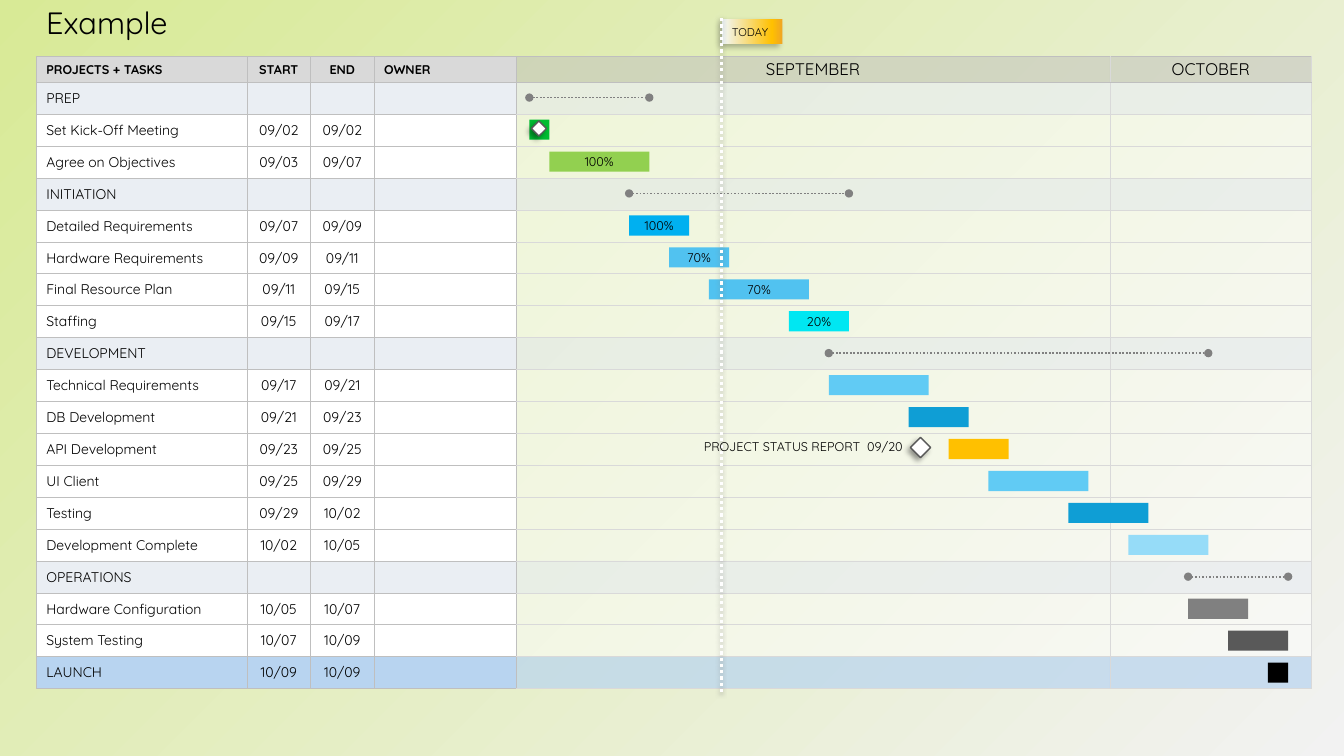
from dataclasses import dataclass
from typing import Optional

import lxml.etree
import pptx
import pptx.dml.color
import pptx.enum.dml
import pptx.enum.shapes
import pptx.enum.text
import pptx.oxml.ns
import pptx.shapes.autoshape
import pptx.shapes.base
import pptx.shapes.connector
import pptx.slide
import pptx.table
import pptx.text.text
import pptx.util

Inches = pptx.util.Inches
Pt = pptx.util.Pt
RGBColor = pptx.dml.color.RGBColor
Align = pptx.enum.text.PP_ALIGN
Shape = pptx.enum.shapes.MSO_SHAPE
qn = pptx.oxml.ns.qn

BLACK = RGBColor(0x00, 0x00, 0x00)
WHITE = RGBColor(0xFF, 0xFF, 0xFF)
PALE = RGBColor(0xF2, 0xF2, 0xF2)
LIME = RGBColor(0xD8, 0xEA, 0x96)
HEADER = RGBColor(0xD9, 0xD9, 0xD9)
BORDER = RGBColor(0xBF, 0xBF, 0xBF)
PHASE = RGBColor(0xEA, 0xEE, 0xF3)
LAUNCH = RGBColor(0xB8, 0xD4, 0xF0)
GREY = RGBColor(0x80, 0x80, 0x80)
DARK = RGBColor(0x59, 0x59, 0x59)
GREEN = RGBColor(0x00, 0xBD, 0x32)
LIGHT_GREEN = RGBColor(0x92, 0xD0, 0x50)
AZURE = RGBColor(0x00, 0xB0, 0xF0)
SOFT_BLUE = RGBColor(0x51, 0xC2, 0xF0)
CYAN = RGBColor(0x00, 0xE7, 0xF2)
SKY = RGBColor(0x61, 0xCB, 0xF4)
OCEAN = RGBColor(0x0F, 0x9E, 0xD5)
ICE = RGBColor(0x96, 0xDC, 0xF8)
AMBER = RGBColor(0xFF, 0xC0, 0x00)
ORANGE = RGBColor(0xF0, 0xA6, 0x22)
MIST = RGBColor(0xF0, 0xF8, 0xFD)

FONT = "Quicksand"
TABLE_LEFT, TABLE_TOP = 0.36, 0.56
COLUMNS = [2.09, 0.63, 0.63, 1.41, 5.89, 2]
HEADER_HEIGHT = 0.25
FIRST_TIMELINE_COLUMN = 4
TODAY_LEFT = 7.16


@dataclass
class Task:
    name: str
    start: str
    end: str
    color: RGBColor
    label: str = ""
    row_fill: RGBColor = WHITE
    row_alpha: int = 50


@dataclass
class Phase:
    name: str
    tasks: list[Task]


PHASES = [
    Phase("PREP", [
        Task("Set Kick-Off Meeting", "09/02", "09/02", GREEN),
        Task("Agree on Objectives", "09/03", "09/07", LIGHT_GREEN, "100%")]),
    Phase("INITIATION", [
        Task("Detailed Requirements", "09/07", "09/09", AZURE, "100%"),
        Task("Hardware Requirements", "09/09", "09/11", SOFT_BLUE, "70%"),
        Task("Final Resource Plan", "09/11", "09/15", SOFT_BLUE, "70%"),
        Task("Staffing", "09/15", "09/17", CYAN, "20%")]),
    Phase("DEVELOPMENT", [
        Task("Technical Requirements", "09/17", "09/21", SKY),
        Task("DB Development", "09/21", "09/23", OCEAN),
        Task("API Development", "09/23", "09/25", AMBER),
        Task("UI Client", "09/25", "09/29", SKY),
        Task("Testing", "09/29", "10/02", OCEAN),
        Task("Development Complete", "10/02", "10/05", ICE)]),
    Phase("OPERATIONS", [
        Task("Hardware Configuration", "10/05", "10/07", GREY),
        Task("System Testing", "10/07", "10/09", DARK),
        Task("LAUNCH", "10/09", "10/09", BLACK, "", LAUNCH, 70)]),
]
ROWS = [row for phase in PHASES for row in (phase, *phase.tasks)]
ROW_HEIGHT = 6.02 / len(ROWS)


def day_left(date: str) -> float:
    month, day = map(int, date.split("/"))
    return 5.25 + 0.198 * ((month - 9) * 30 + day - 2)


def add_xml(parent: lxml.etree._Element, tag: str, **values: object) -> lxml.etree._Element:
    return lxml.etree.SubElement(parent, qn(tag), {key: str(value) for key, value in values.items()})


def set_gradient(element: lxml.etree._Element, stops: list[tuple[int, RGBColor]], angle: int) -> None:
    gradient = element.find(".//" + qn("a:gradFill"))
    for child in list(gradient):
        gradient.remove(child)
    stop_list = add_xml(gradient, "a:gsLst")
    for position, color in stops:
        add_xml(add_xml(stop_list, "a:gs", pos=position * 1000), "a:srgbClr", val=color)
    add_xml(gradient, "a:lin", ang=angle * 60000, scaled=0)


def add_shadow(shape: pptx.shapes.base.BaseShape, color: RGBColor, alpha: int, blur: int, distance: int) -> None:
    effects = shape.element.find(".//" + qn("a:effectLst"))
    shadow = add_xml(effects, "a:outerShdw", blurRad=Pt(blur), dist=Pt(distance), dir=135 * 60000, rotWithShape=0)
    add_xml(add_xml(shadow, "a:srgbClr", val=color), "a:alpha", val=alpha * 1000)


def write(frame: pptx.text.text.TextFrame, text: str, size: float, align: Align = Align.LEFT,
          bold: bool = False) -> None:
    para = frame.paragraphs[0]
    para.alignment = align
    para.font.name, para.font.size, para.font.bold = FONT, Pt(size), bold
    para.font.color.rgb = BLACK
    if text:
        para.add_run().text = text
    else:
        add_xml(para._p, "a:endParaRPr", sz=int(size * 100))


def style_cell(cell: pptx.table._Cell, fill: RGBColor, alpha: int, edges: dict[str, RGBColor]) -> None:
    cell.vertical_anchor = pptx.enum.text.MSO_ANCHOR.MIDDLE
    properties = cell._tc.get_or_add_tcPr()
    for side, color in edges.items():
        line = add_xml(properties, "a:ln" + side, w=Pt(0.5))
        add_xml(add_xml(line, "a:solidFill"), "a:srgbClr", val=color)
    cell.fill.solid()
    cell.fill.fore_color.rgb = fill
    if alpha < 100:
        color_element = properties.find(qn("a:solidFill")).find(qn("a:srgbClr"))
        add_xml(color_element, "a:alpha", val=alpha * 1000)


def add_block(page: pptx.slide.Slide, kind: Shape, left: float, top: float, width: float, height: float,
              color: Optional[RGBColor]) -> pptx.shapes.autoshape.Shape:
    block = page.shapes.add_shape(kind, Inches(left), Inches(top), Inches(width), Inches(height))
    block.shadow.inherit = False
    block.line.fill.background()
    if color is not None:
        block.fill.solid()
        block.fill.fore_color.rgb = color
    return block


def add_milestone(page: pptx.slide.Slide, left: float, top: float, size: float) -> None:
    diamond = add_block(page, Shape.DIAMOND, left, top, size, size, WHITE)
    diamond.line.color.rgb = DARK
    diamond.line.width = Pt(1)
    add_shadow(diamond, BLACK, 40, 4, 3)


def add_dotted_line(page: pptx.slide.Slide, start: tuple[float, float], end: tuple[float, float],
                    color: RGBColor, width: float) -> pptx.shapes.connector.Connector:
    line = page.shapes.add_connector(pptx.enum.shapes.MSO_CONNECTOR.STRAIGHT, *map(Inches, start + end))
    line.line.color.rgb = color
    line.line.width = Pt(width)
    line.line.dash_style = pptx.enum.dml.MSO_LINE.ROUND_DOT
    add_xml(line.element.spPr, "a:effectLst")
    return line


def add_text(page: pptx.slide.Slide, text: str, left: float, top: float, width: float, height: float,
             size: float, align: Align = Align.LEFT) -> None:
    box = page.shapes.add_textbox(Inches(left), Inches(top), Inches(width), Inches(height))
    box.text_frame.word_wrap = True
    write(box.text_frame, text, size, align)


def add_plan_table(page: pptx.slide.Slide) -> None:
    headings = ["PROJECTS + TASKS", "START", "END", "OWNER", "SEPTEMBER", "OCTOBER"]
    table = page.shapes.add_table(len(ROWS) + 1, len(COLUMNS), Inches(TABLE_LEFT), Inches(TABLE_TOP),
                                  Inches(sum(COLUMNS)), Inches(HEADER_HEIGHT + 6.02)).table
    table.first_row = table.horz_banding = False
    for column, width in zip(table.columns, COLUMNS):
        column.width = Inches(width)
    for index, row in enumerate([None, *ROWS]):
        table.rows[index].height = Inches(ROW_HEIGHT if row else HEADER_HEIGHT)
        if row is None:
            texts, fill, alpha = headings, HEADER, 50
        elif isinstance(row, Phase):
            texts, fill, alpha = [row.name] + [""] * 5, PHASE, 70
        else:
            texts, fill, alpha = [row.name, row.start, row.end, "", "", ""], row.row_fill, row.row_alpha
        for position, text in enumerate(texts):
            cell = table.cell(index, position)
            timeline = position >= FIRST_TIMELINE_COLUMN
            inner = HEADER if timeline else BORDER
            edges = {"L": BORDER if position == FIRST_TIMELINE_COLUMN else inner, "R": inner,
                     "T": BORDER if index < 2 else inner, "B": BORDER if index == 0 else inner}
            cell_fill = BORDER if timeline and row is None else fill
            style_cell(cell, cell_fill, alpha if timeline else 100, edges)
            if timeline:
                cell.margin_left = cell.margin_right = cell.margin_top = cell.margin_bottom = 0
            size = 10 if row else 12 if timeline else 9
            align = Align.CENTER if position in (1, 2, 4, 5) else Align.LEFT
            write(cell.text_frame, text, size, align, row is None and not timeline)


def add_timeline(page: pptx.slide.Slide) -> None:
    for index, row in enumerate(ROWS):
        top = TABLE_TOP + HEADER_HEIGHT + index * ROW_HEIGHT
        if isinstance(row, Phase):
            middle = top + ROW_HEIGHT / 2
            line = add_dotted_line(page, (day_left(row.tasks[0].start), middle),
                                   (day_left(row.tasks[-1].end) + 0.2, middle), GREY, 1.25)
            for end in ("a:headEnd", "a:tailEnd"):
                add_xml(line.element.find(".//" + qn("a:ln")), end, type="oval")
        else:
            left, last = day_left(row.start), day_left(row.end)
            bar = add_block(page, Shape.RECTANGLE, left, top + 0.06, last + 0.2 - left, 0.2, row.color)
            if row.label:
                write(bar.text_frame, row.label, 9, Align.CENTER)


def add_today_marker(page: pptx.slide.Slide) -> None:
    flag = add_block(page, Shape.RECTANGLE, TODAY_LEFT, 0.19, 0.6, 0.25, None)
    flag.fill.gradient()
    set_gradient(flag.element, [(0, MIST), (83, AMBER), (100, ORANGE)], 0)
    add_shadow(flag, BLACK, 25, 4, 3)
    write(flag.text_frame, "TODAY", 8)
    line = add_dotted_line(page, (TODAY_LEFT, 0.18), (TODAY_LEFT, 6.88), WHITE, 2.25)
    add_shadow(line, GREY, 50, 3, 1)


def main() -> None:
    deck = pptx.Presentation()
    deck.slide_width, deck.slide_height = Inches(13.33), Inches(7.5)
    page = deck.slides.add_slide(deck.slide_layouts[6])
    page.background.fill.gradient()
    set_gradient(page.element, [(0, PALE), (100, LIME)], 225)
    # Plan and bars
    add_plan_table(page)
    add_timeline(page)
    # Milestones
    add_milestone(page, 5.27, 1.2, 0.15)
    add_milestone(page, 9.03, 4.34, 0.2)
    # Today marker and captions
    add_today_marker(page)
    add_text(page, "PROJECT STATUS REPORT  09/20 ", 6.86, 4.31, 2.19, 0.3, 9, Align.RIGHT)
    add_text(page, "Example", 0.36, -0.01, 3.36, 0.47, 22)
    deck.save("out.pptx")


if __name__ == "__main__":
    main()
